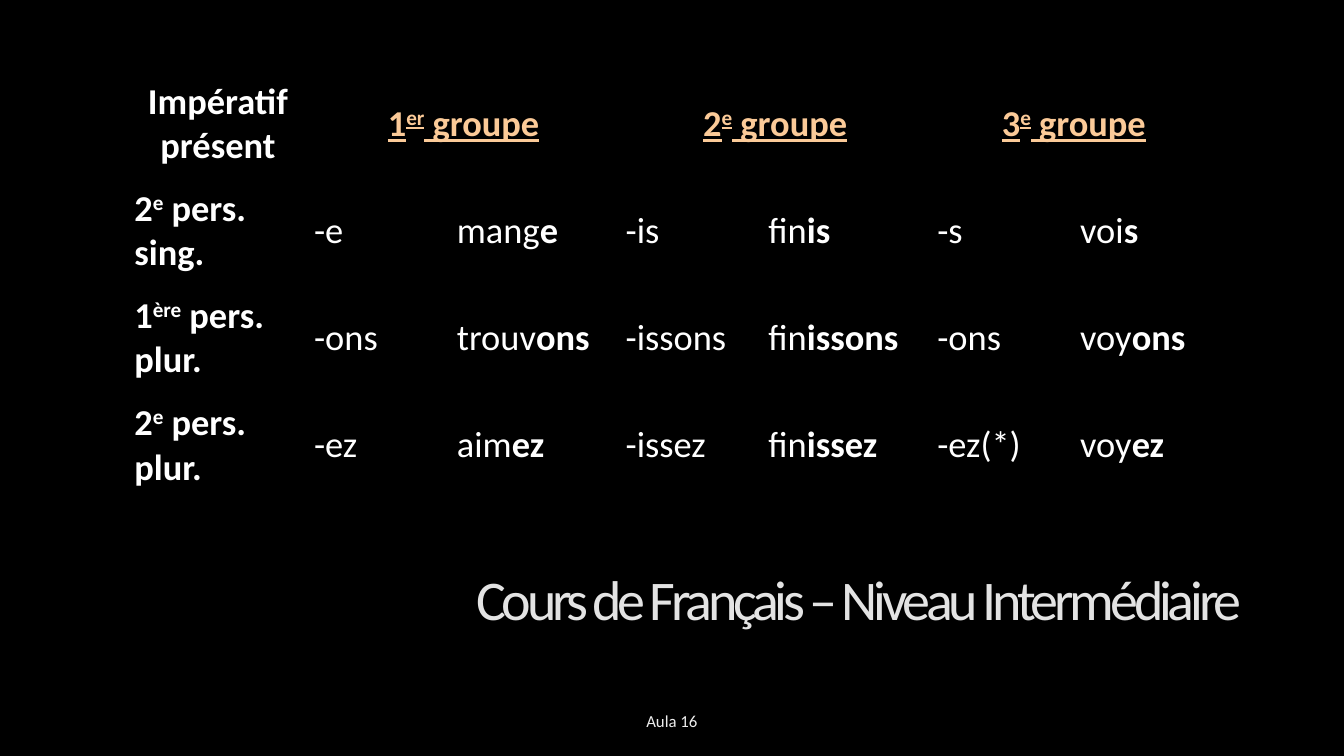
from dataclasses import dataclass
from itertools import product

from lxml.etree import SubElement
from pptx import Presentation
from pptx.dml.color import RGBColor
from pptx.enum.text import MSO_ANCHOR as Anchor, PP_ALIGN as Align
from pptx.oxml.ns import qn
from pptx.slide import Slide
from pptx.table import Table, _Cell as Cell
from pptx.text.text import _Paragraph as Paragraph
from pptx.util import Inches, Length, Pt

BLACK = RGBColor(0x00, 0x00, 0x00)
WHITE = RGBColor(0xFF, 0xFF, 0xFF)
PEACH = RGBColor(0xFB, 0xCA, 0x98)
SILVER = RGBColor(0xE3, 0xE3, 0xE3)
PALE = RGBColor(0xED, 0xED, 0xED)

FONT = "Calibri"
GRID_COLUMNS, GRID_ROWS = 160, 90
UNIT = Inches(7.5) / GRID_ROWS
COLUMN_SPANS = (21.4, 17, 20.1, 17, 20.1, 17, 17)
ROW_SPAN = 12.75
TABLE_SIZE = 26
CELL_MARGIN = 0.75


@dataclass(frozen=True)
class Span:
    text: str
    bold: bool = False
    raised: bool = False
    underlined: bool = False
    color: RGBColor = WHITE


@dataclass(frozen=True)
class Caption:
    text: str
    left: float
    top: float
    width: float
    height: float
    size: int
    color: RGBColor
    align: Align
    anchor: Anchor
    line_spacing: float = 1.0
    tracking: int = 0


@dataclass(frozen=True)
class Ordinal:
    number: str
    suffix: str
    noun: str

    def spans(self, underlined: bool = False, color: RGBColor = WHITE) -> list[Span]:
        return [
            Span(self.number, True, False, underlined, color),
            Span(self.suffix, True, True, underlined, color),
            Span(self.noun, True, False, underlined, color),
        ]


@dataclass(frozen=True)
class Form:
    stem: str
    ending: str
    mark: str = ""


@dataclass(frozen=True)
class Person:
    label: Ordinal
    forms: tuple[Form, ...]


CAPTIONS = (
    Caption("Cours de Français – Niveau Intermédiaire", 11, 67.5, 138, 12.6,
            40, SILVER, Align.RIGHT, Anchor.TOP, 0.9, -300),
    Caption("Aula 16", 53, 83.4, 54, 4.8, 12, PALE, Align.CENTER, Anchor.MIDDLE),
)
GROUPS = (
    Ordinal("1", "er", " groupe"),
    Ordinal("2", "e", " groupe"),
    Ordinal("3", "e", " groupe"),
)
PERSONS = (
    Person(Ordinal("2", "e", " pers. sing."),
           (Form("mang", "e"), Form("fin", "is"), Form("voi", "s"))),
    Person(Ordinal("1", "ère", " pers. plur."),
           (Form("trouv", "ons"), Form("fin", "issons"), Form("voy", "ons"))),
    Person(Ordinal("2", "e", " pers. plur."),
           (Form("aim", "ez"), Form("fin", "issez"), Form("voy", "ez", "(*)"))),
)


def units(count: float) -> Length:
    return Length(round(count * UNIT))


def write(para: Paragraph, spans: list[Span], size: int, align: Align,
          tracking: int = 0) -> None:
    para.alignment = align
    para.font.name = FONT
    para.font.size = Pt(size)
    for span in spans:
        run = para.add_run()
        run.text = span.text
        run.font.bold = span.bold
        run.font.underline = span.underlined
        run.font.color.rgb = span.color
        properties = run._r.get_or_add_rPr()
        if span.raised:
            properties.set("baseline", "30000")
        if tracking:
            properties.set("spc", str(tracking))


def add_caption(slide: Slide, caption: Caption) -> None:
    box = slide.shapes.add_textbox(units(caption.left), units(caption.top),
                                   units(caption.width), units(caption.height))
    frame = box.text_frame
    frame.word_wrap = True
    frame.vertical_anchor = caption.anchor
    para = frame.paragraphs[0]
    para.line_spacing = caption.line_spacing
    write(para, [Span(caption.text, color=caption.color)], caption.size,
          caption.align, caption.tracking)


def format_cell(cell: Cell) -> None:
    properties = cell._tc.get_or_add_tcPr()
    for side in ("a:lnL", "a:lnR", "a:lnT", "a:lnB"):
        line = SubElement(properties, qn(side), w=str(Pt(0.75)))
        fill = SubElement(line, qn("a:solidFill"))
        SubElement(fill, qn("a:srgbClr"), val=str(BLACK))
    cell.fill.background()
    cell.vertical_anchor = Anchor.MIDDLE
    cell.margin_left = cell.margin_right = units(CELL_MARGIN)
    cell.margin_top = cell.margin_bottom = units(CELL_MARGIN)


def fill_cell(table: Table, row: int, column: int, spans: list[Span],
              align: Align = Align.LEFT) -> None:
    para = table.cell(row, column).text_frame.paragraphs[0]
    write(para, spans, TABLE_SIZE, align)


def add_conjugation(slide: Slide) -> None:
    row_count, column_count = len(PERSONS) + 1, len(COLUMN_SPANS)
    table = slide.shapes.add_table(
        row_count, column_count, units(15.25), units(8.4),
        units(sum(COLUMN_SPANS)), units(row_count * ROW_SPAN)).table
    table.first_row = table.horz_banding = False
    for column, width in zip(table.columns, COLUMN_SPANS):
        column.width = units(width)
    for row in table.rows:
        row.height = units(ROW_SPAN)
    for row, column in product(range(row_count), range(column_count)):
        format_cell(table.cell(row, column))

    fill_cell(table, 0, 0, [Span("Impératif présent", bold=True)], Align.CENTER)
    for index, group in enumerate(GROUPS):
        column = 1 + 2 * index
        table.cell(0, column).merge(table.cell(0, column + 1))
        fill_cell(table, 0, column, group.spans(True, PEACH), Align.CENTER)
    for row, person in enumerate(PERSONS, start=1):
        fill_cell(table, row, 0, person.label.spans())
        for index, form in enumerate(person.forms):
            column = 1 + 2 * index
            fill_cell(table, row, column, [Span(f"-{form.ending}{form.mark}")])
            fill_cell(table, row, column + 1,
                      [Span(form.stem), Span(form.ending, bold=True)])


def main() -> None:
    deck = Presentation()
    deck.slide_width = units(GRID_COLUMNS)
    deck.slide_height = units(GRID_ROWS)
    page = deck.slides.add_slide(deck.slide_layouts[6])
    page.background.fill.solid()
    page.background.fill.fore_color.rgb = BLACK
    for caption in CAPTIONS:
        add_caption(page, caption)
    add_conjugation(page)
    deck.save("out.pptx")


if __name__ == "__main__":
    main()
